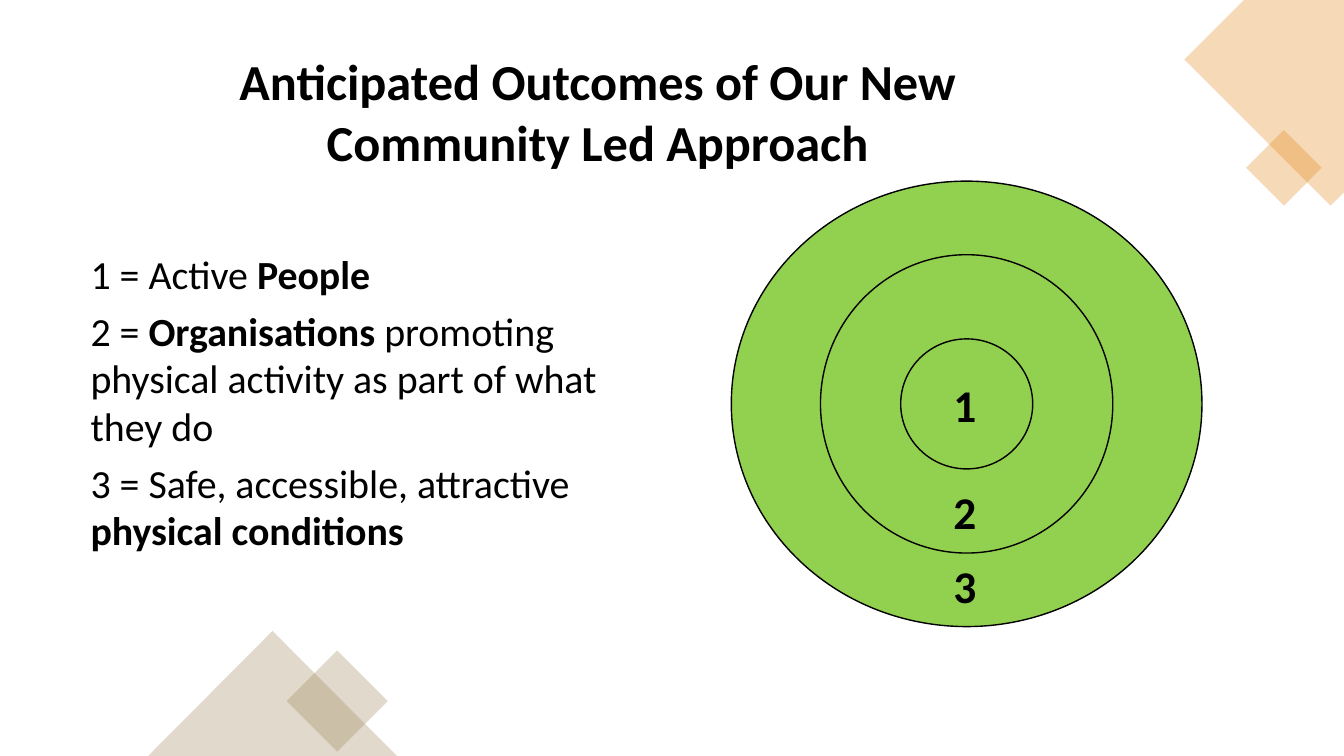
import pptx
import pptx.util
import pptx.dml.color
import pptx.enum.shapes
import pptx.enum.text
import lxml.etree

Pt = pptx.util.Pt
Kind = pptx.enum.shapes.MSO_SHAPE
Align = pptx.enum.text.PP_ALIGN
BLACK, GREEN, ORANGE, TAN = "000000", "92D050", "E48312", "9B8357"

deck = pptx.Presentation()
deck.slide_width, deck.slide_height = Pt(960), Pt(540)
slide = deck.slides.add_slide(deck.slide_layouts[6])
shapes = slide.shapes


def paint(shape, color, alpha=100):
    shape.shadow.inherit = False
    shape.fill.solid()
    shape.fill.fore_color.rgb = pptx.dml.color.RGBColor.from_string(color)
    shape.line.fill.background()
    if alpha < 100:
        tone = shape.fill._xPr.find(".//" + pptx.oxml.ns.qn("a:srgbClr"))
        lxml.etree.SubElement(tone, pptx.oxml.ns.qn("a:alpha"), val=str(alpha * 1000))


def write(box, paras, size, align=Align.LEFT, after=0):
    frame = shapes.add_textbox(*map(Pt, box)).text_frame
    frame.word_wrap = True
    for i, runs in enumerate(paras):
        para = frame.paragraphs[0] if i == 0 else frame.add_paragraph()
        para.alignment = align
        para.space_after = Pt(after)
        para.font.name = "Calibri"
        para.font.size = Pt(size)
        para.font.color.rgb = pptx.dml.color.RGBColor.from_string(BLACK)
        for text, bold in runs:
            run = para.add_run()
            run.text = text
            run.font.bold = bold


# Corner ornaments
edge = [(888.5, 0), (846, 42.5), (950.4, 146.9), (960, 137.5)]
build = shapes.build_freeform(Pt(960), Pt(0), scale=1.0)
build.add_line_segments([(Pt(x), Pt(y)) for x, y in edge], close=True)
paint(build.convert_to_shape(), ORANGE, 30)

for kind, box, turn, color in [
    (Kind.RECTANGLE, (898, 100.8, 38.2, 38.2), 45, ORANGE),
    (Kind.RECTANGLE, (215.3, 475.2, 51.1, 51.1), 45, TAN),
    (Kind.ISOSCELES_TRIANGLE, (105.8, 450.7, 177.8, 89.3), 0, TAN),
]:
    shape = shapes.add_shape(kind, *map(Pt, box))
    shape.rotation = turn
    paint(shape, color, 30)

# Rings, outermost first, on one centre
for wide, high in [(336.2, 318.2), (208.8, 213.1), (94.3, 92.9)]:
    ring = shapes.add_shape(Kind.OVAL, Pt(690.5 - wide / 2), Pt(288.5 - high / 2),
                            Pt(wide), Pt(high))
    paint(ring, GREEN)
    ring.line.color.rgb = pptx.dml.color.RGBColor.from_string(BLACK)
    ring.line.width = Pt(1)

# Ring numbers
for label, top in [("1", 265.7), ("2", 342), ("3", 395.3)]:
    write((673.9, top, 33.1, 46.1), [[(label, True)]], 32.4, after=6)

# Key to the rings
write((57.6, 175, 406, 226.8), [
    [("1 = Active ", False), ("People", True)],
    [("2 = ", False), ("Organisations", True),
     (" promoting physical activity as part of what they do", False)],
    [("3 = Safe, accessible, attractive ", False), ("physical conditions", True)],
], 28.5, after=6)

# Title
write((89.3, 32.4, 675.4, 94.3),
      [[("Anticipated Outcomes of Our New Community Led Approach", True)]],
      36, Align.CENTER)

deck.save("out.pptx")
